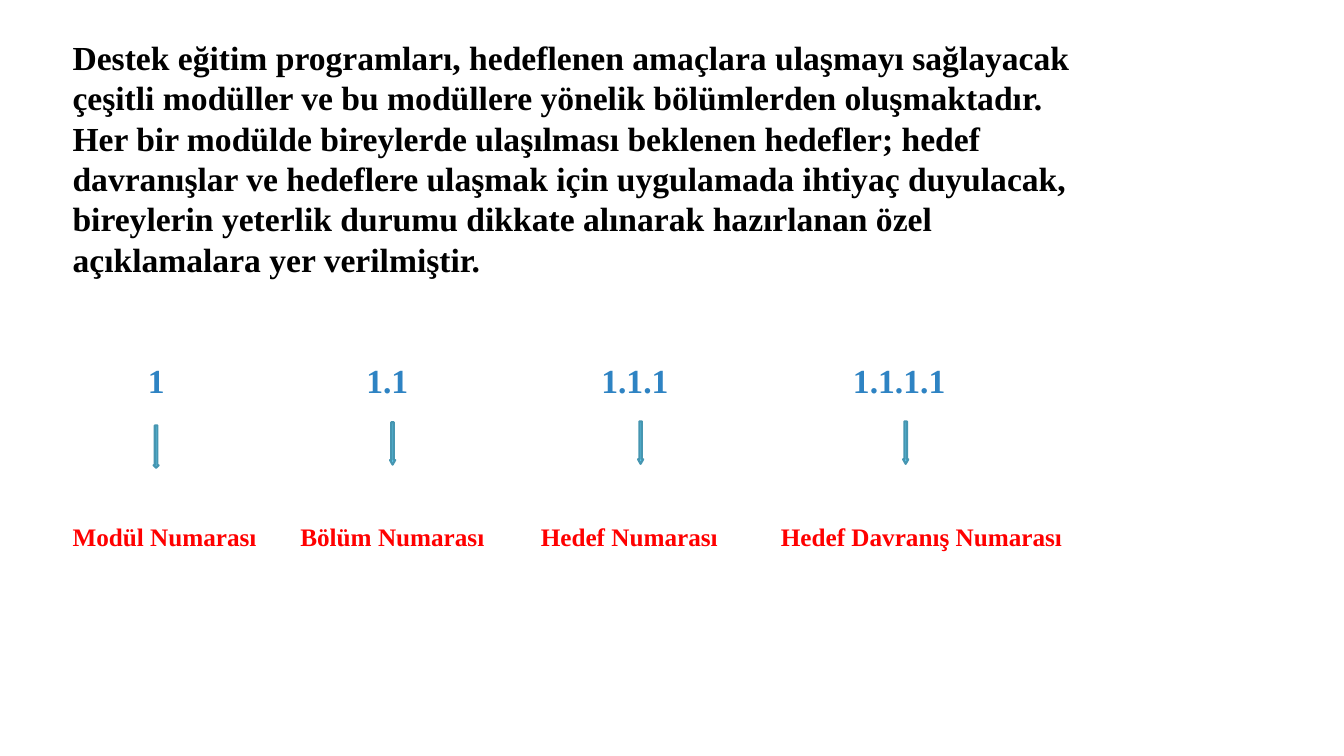
import dataclasses

import lxml.etree
import pptx
import pptx.dml.color
import pptx.enum.shapes
import pptx.enum.text
import pptx.oxml.ns
import pptx.util

Cm = pptx.util.Cm
Pt = pptx.util.Pt


@dataclasses.dataclass(frozen=True)
class Theme:
    font: str = "Times New Roman"
    body: str = "000000"
    number: str = "2E83C3"
    label: str = "FF0000"
    arrow_fill: str = "5FCBEF"
    arrow_line: str = "4696B1"
    large: int = 24
    small: int = 18


class SlideBuilder:
    """Draws text and arrows on one slide in one theme."""

    def __init__(self, slide, theme):
        self.slide = slide
        self.theme = theme

    def rgb(self, value):
        return pptx.dml.color.RGBColor.from_string(value)

    def text_box(self, left, top, width, height):
        frame = self.slide.shapes.add_textbox(Cm(left), Cm(top), Cm(width), Cm(height)).text_frame
        frame.word_wrap = True
        frame.vertical_anchor = pptx.enum.text.MSO_ANCHOR.TOP
        return frame

    def paragraph(self, paragraph, text, size, color, before=0, tabs=(), align="l"):
        if tabs:
            qn = pptx.oxml.ns.qn
            tab_list = lxml.etree.SubElement(paragraph._p.get_or_add_pPr(), qn("a:tabLst"))
            for position in tabs:
                lxml.etree.SubElement(tab_list, qn("a:tab"), pos=str(int(Cm(position))), algn=align)
        if before:
            paragraph.space_before = Pt(before)
        run = paragraph.add_run()
        run.text = text
        style = {"name": self.theme.font, "size": Pt(size), "bold": True}
        for key, value in style.items():
            setattr(run.font, key, value)
        run.font.color.rgb = self.rgb(color)

    def down_arrow(self, left, top, head):
        arrow = self.slide.shapes.add_shape(
            pptx.enum.shapes.MSO_SHAPE.DOWN_ARROW, Cm(left), Cm(top), Cm(0.13), Cm(1.07))
        arrow.adjustments[1] = head
        arrow.shadow.inherit = False
        arrow.fill.solid()
        arrow.fill.fore_color.rgb = self.rgb(self.theme.arrow_fill)
        arrow.line.color.rgb = self.rgb(self.theme.arrow_line)
        arrow.line.width = Pt(1.5)


INTRO = (
    "Destek eğitim programları, hedeflenen amaçlara ulaşmayı sağlayacak çeşitli modüller "
    "ve bu modüllere yönelik bölümlerden oluşmaktadır. Her bir modülde bireylerde ulaşılması "
    "beklenen hedefler; hedef davranışlar ve hedeflere ulaşmak için uygulamada ihtiyaç "
    "duyulacak, bireylerin yeterlik durumu dikkate alınarak hazırlanan özel açıklamalara "
    "yer verilmiştir."
)
NUMBERS = ["1", "1.1", "1.1.1", "1.1.1.1"]
LABELS = ["Modül Numarası", "Bölüm Numarası", "Hedef Numarası", "Hedef Davranış Numarası"]
NUMBER_CENTRES = [2.11, 7.93, 14.17, 20.83]
LABEL_STARTS = [5.74, 11.8, 17.85]
ARROWS = [(3.87, 10.72, 0.5), (9.83, 10.64, 0.89), (16.08, 10.62, 0.89), (22.76, 10.62, 0.89)]


def main():
    presentation = pptx.Presentation()
    presentation.slide_width = Cm(33.87)
    presentation.slide_height = Cm(19.05)
    theme = Theme()
    builder = SlideBuilder(presentation.slides.add_slide(presentation.slide_layouts[6]), theme)

    content = builder.text_box(1.58, 0.81, 26.29, 16.41)
    builder.paragraph(content.paragraphs[0], INTRO, theme.large, theme.body)
    builder.paragraph(content.add_paragraph(), "\t" + "\t".join(NUMBERS), theme.large,
                      theme.number, before=57.6, tabs=NUMBER_CENTRES, align="ctr")
    builder.paragraph(content.add_paragraph(), "\t".join(LABELS), theme.small,
                      theme.label, before=86.4, tabs=LABEL_STARTS)

    for left, top, head in ARROWS:
        builder.down_arrow(left, top, head)

    presentation.save("out.pptx")


if __name__ == "__main__":
    main()
